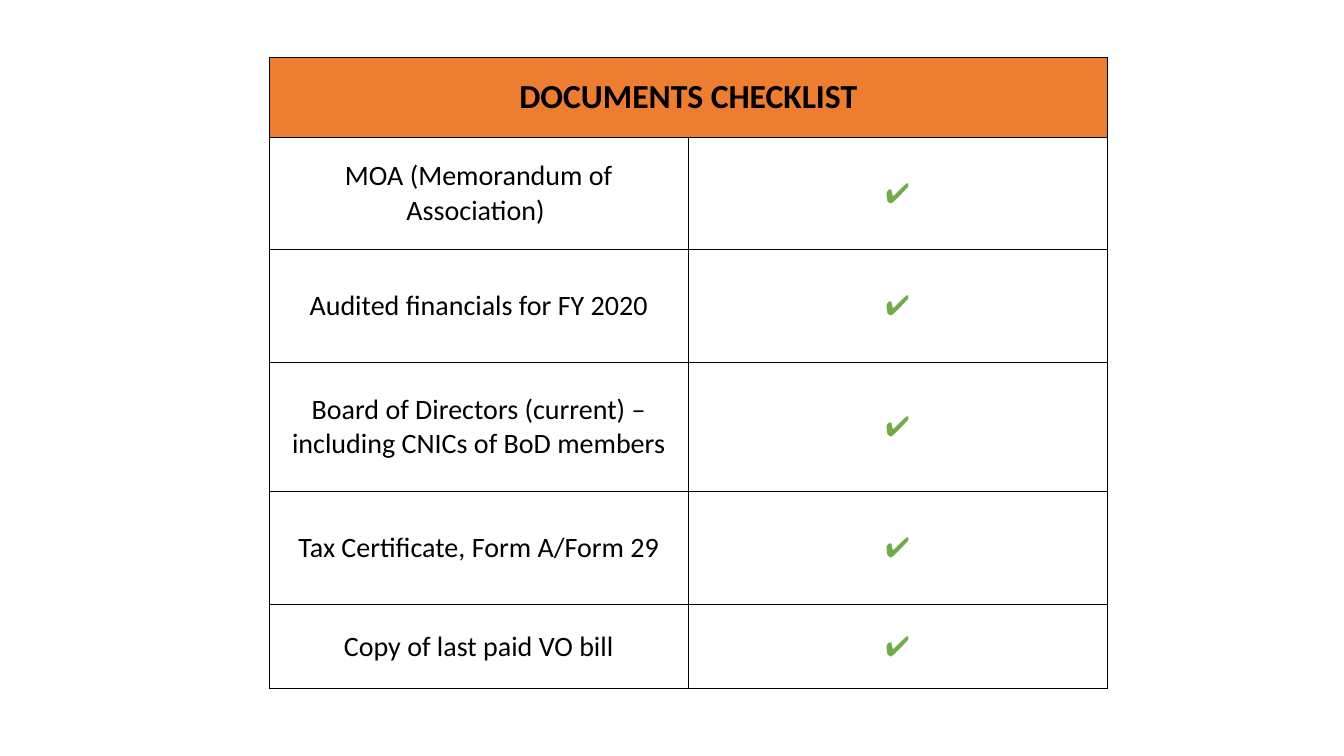
import pptx
import pptx.dml.color
import pptx.enum.text
import pptx.oxml
import pptx.oxml.ns
import pptx.util

INK, ORANGE, GREEN = "000000", "ED7D31", "70AD47"
DOCUMENTS = [
    "MOA (Memorandum of Association) ",
    "Audited financials for FY 2020",
    "Board of Directors (current) – including CNICs of BoD members",
    "Tax Certificate, Form A/Form 29",
    "Copy of last paid VO bill",
]
COLUMN_SHARES = [31.18, 31.18]
ROW_SHARES = [10.53, 14.93, 14.93, 17.07, 14.93, 11.07]


def color(code):
    """Turn a hex string into a colour."""
    return pptx.dml.color.RGBColor.from_string(code)


def apply(target, values):
    """Set each attribute named in a dict of format values."""
    for name, value in values.items():
        setattr(target, name, value)


class Checklist:
    """Hold the style and the current page; lengths are percent of the slide."""

    font = {"name": "Calibri", "size": pptx.util.Pt(20), "bold": False}
    margins = {f"margin_{side}": pptx.util.Inches(0.13)
               for side in ("left", "right", "top", "bottom")}
    border = pptx.util.Pt(0.75)

    def __init__(self, deck):
        """Add a blank page to the deck."""
        self.deck = deck
        self.page = deck.slides.add_slide(deck.slide_layouts[6])

    def across(self, share):
        """Convert a share of the slide's width."""
        return round(self.deck.slide_width * share / 100)

    def down(self, share):
        """Convert a share of the slide's height."""
        return round(self.deck.slide_height * share / 100)

    def table(self, left, top, columns, rows):
        """Add a plain bordered table with the given column and row shares."""
        frame = self.page.shapes.add_table(
            len(rows), len(columns), self.across(left), self.down(top),
            self.across(sum(columns)), self.down(sum(rows)))
        table = frame.table
        apply(table, {"first_row": False, "horz_banding": False})
        for column, share in zip(table.columns, columns):
            column.width = self.across(share)
        for row, share in zip(table.rows, rows):
            row.height = self.down(share)
        for cell in table.iter_cells():
            apply(cell, self.margins)
            self.outline(cell)
            cell.fill.background()
        return table

    def outline(self, cell):
        """Draw a solid line on all four sides of a cell."""
        namespace = pptx.oxml.ns.nsdecls("a")
        for side in ("lnL", "lnR", "lnT", "lnB"):
            cell._tc.get_or_add_tcPr().append(pptx.oxml.parse_xml(
                f'<a:{side} {namespace} w="{self.border}"><a:solidFill>'
                f'<a:srgbClr val="{INK}"/></a:solidFill></a:{side}>'))

    def label(self, cell, text, ink=INK, anchor="MIDDLE", spacing=None, **font):
        """Put one centred paragraph in a cell."""
        anchors = pptx.enum.text.MSO_ANCHOR
        cell.vertical_anchor = anchors[anchor]
        para = cell.text_frame.paragraphs[0]
        apply(para, {"alignment": pptx.enum.text.PP_ALIGN.CENTER,
                     "line_spacing": spacing})
        span = para.add_run()
        span.text = text
        apply(span.font, self.font | font)
        span.font.color.rgb = color(ink)

    def heading(self, table, text):
        """Merge the first row into a filled heading."""
        cell = table.cell(0, 0)
        cell.merge(table.cell(0, len(table.columns) - 1))
        cell.fill.solid()
        cell.fill.fore_color.rgb = color(ORANGE)
        self.label(cell, text, anchor="TOP", spacing=1.15,
                   size=pptx.util.Pt(24), bold=True)


def main():
    """Build the checklist slide and save it."""
    deck = pptx.Presentation()
    apply(deck, {"slide_width": pptx.util.Inches(13.33),
                 "slide_height": pptx.util.Inches(7.5)})
    checklist = Checklist(deck)
    table = checklist.table(20.03, 7.6, COLUMN_SHARES, ROW_SHARES)
    checklist.heading(table, "DOCUMENTS CHECKLIST")
    for row, document in enumerate(DOCUMENTS, start=1):
        checklist.label(table.cell(row, 0), document)
        checklist.label(table.cell(row, 1), "✔", GREEN)
    deck.save("out.pptx")


if __name__ == "__main__":
    main()
